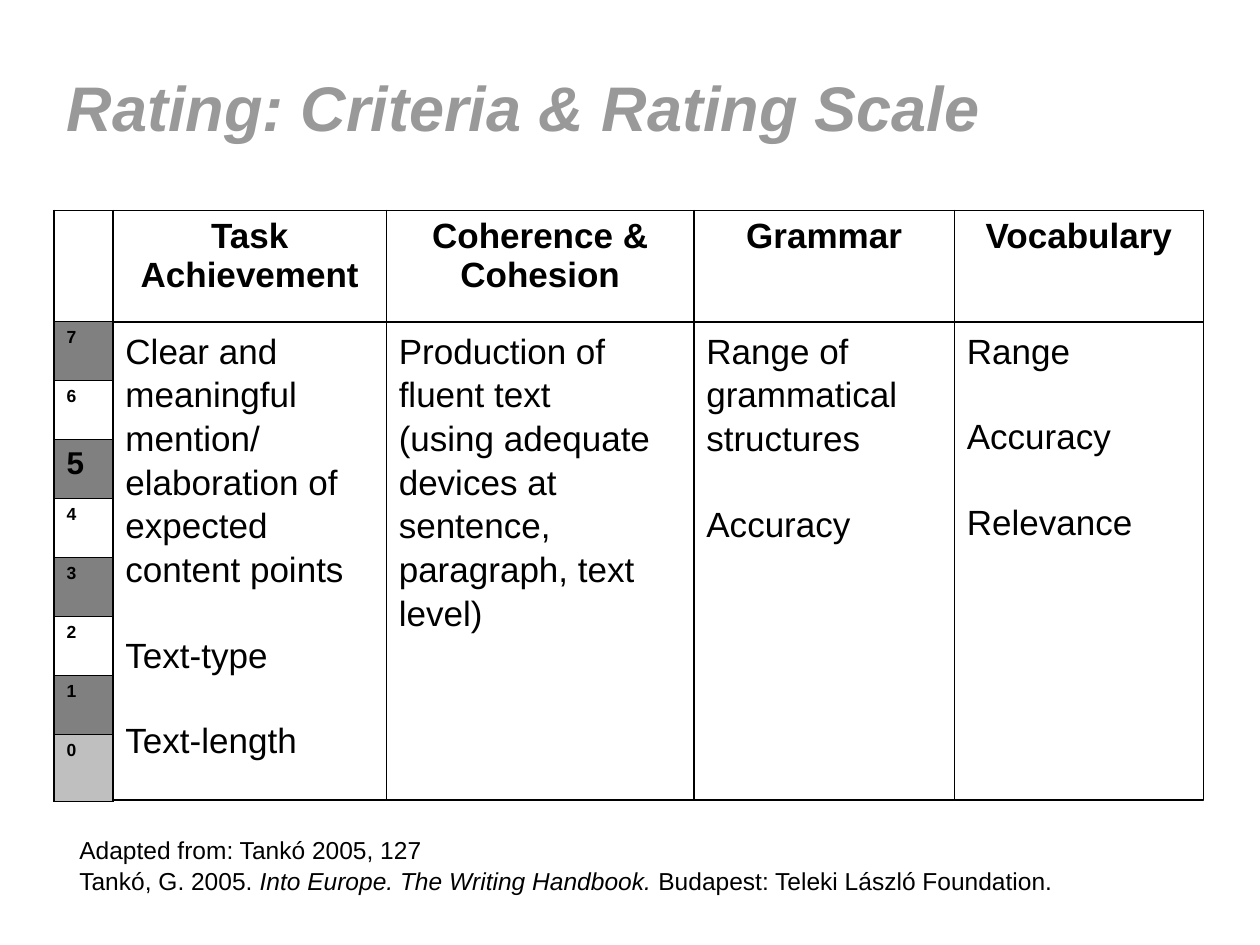
from lxml import etree
from pptx import Presentation, util as u
from pptx.dml.color import RGBColor
from pptx.enum import shapes, text
from pptx.oxml import ns

COLORS = {"title": "999999", "ink": "000000", "dark": "808080", "light": "BFBFBF"}
LEFT, BODY_TOP, BODY_HEIGHT = 1.09, 6.48, 9.65
SCALE_WIDTH = 1.19
CRITERIA = [
    ("Task Achievement", 5.51, [
        ("Clear and meaningful mention/", 0),
        ("elaboration of expected content points", 0),
        ("Text-type", 24),
        ("Text-length", 24)]),
    ("Coherence & Cohesion", 6.2, [
        ("Production of fluent text", 0),
        ("(using adequate devices at sentence, paragraph, text level)", 0)]),
    ("Grammar", 5.25, [
        ("Range of grammatical structures", 0),
        ("Accuracy", 24)]),
    ("Vocabulary", 5.02, [
        ("Range", 0),
        ("Accuracy", 24),
        ("Relevance", 24)]),
]


def set_font(para, size, bold=False, italic=False, color="ink"):
    font = para.font
    font.name, font.size = "Arial", u.Pt(size)
    font.bold, font.italic = bold, italic
    font.color.rgb = RGBColor.from_string(COLORS[color])


def add_grid(page, top, widths, heights):
    frame = page.shapes.add_table(len(heights), len(widths), u.Cm(LEFT), u.Cm(top),
                                  u.Cm(sum(widths)), u.Cm(sum(heights)))
    grid = frame.table
    grid.first_row = grid.horz_banding = False
    for column, width in zip(grid.columns, widths):
        column.width = u.Cm(width)
    for row, height in zip(grid.rows, heights):
        row.height = u.Cm(height)
    for cell in grid.iter_cells():
        properties = cell._tc.get_or_add_tcPr()
        for side in ("a:lnL", "a:lnR", "a:lnT", "a:lnB"):
            border = etree.SubElement(properties, ns.qn(side), w=str(u.Pt(1)))
            solid = etree.SubElement(border, ns.qn("a:solidFill"))
            etree.SubElement(solid, ns.qn("a:srgbClr"), val=COLORS["ink"])
        cell.fill.background()
    return grid


deck = Presentation()
deck.slide_width, deck.slide_height = u.Cm(25.4), u.Cm(19.05)
page = deck.slides.add_slide(deck.slide_layouts[5])

title = page.shapes.title
title.left, title.top, title.width, title.height = u.Cm(LEFT), u.Cm(0.74), u.Cm(23.6), u.Cm(2.79)
title.text_frame.text = "Rating: Criteria & Rating Scale"
title.text_frame.vertical_anchor = text.MSO_ANCHOR.MIDDLE
para = title.text_frame.paragraphs[0]
para.alignment = text.PP_ALIGN.LEFT
set_font(para, 36, bold=True, italic=True, color="title")

widths = [SCALE_WIDTH] + [width for _, width, _ in CRITERIA]
header = add_grid(page, 4.24, widths, [2.26])
for column, (name, _, _) in enumerate(CRITERIA, start=1):
    cell = header.cell(0, column)
    cell.text = name
    para = cell.text_frame.paragraphs[0]
    para.alignment = text.PP_ALIGN.CENTER
    set_font(para, 20, bold=True)

scale = add_grid(page, BODY_TOP, [SCALE_WIDTH], [1.19] * 7 + [1.35])
for row, score in enumerate(range(7, -1, -1)):
    cell = scale.cell(row, 0)
    cell.text = str(score)
    set_font(cell.text_frame.paragraphs[0], 18 if score == 5 else 10, bold=True)
    if score % 2 or score == 0:
        cell.fill.solid()
        cell.fill.fore_color.rgb = RGBColor.from_string(COLORS["dark" if score else "light"])

left = LEFT + SCALE_WIDTH
for _, width, descriptors in CRITERIA:
    box = page.shapes.add_shape(shapes.MSO_SHAPE.RECTANGLE, u.Cm(left), u.Cm(BODY_TOP),
                                u.Cm(width), u.Cm(BODY_HEIGHT))
    box.shadow.inherit = False
    box.fill.background()
    box.line.color.rgb = RGBColor.from_string(COLORS["ink"])
    box.line.width = u.Pt(0.75)
    frame = box.text_frame
    frame.word_wrap = True
    frame.vertical_anchor = text.MSO_ANCHOR.TOP
    frame.text = "\n".join(words for words, _ in descriptors)
    for para, (_, gap) in zip(frame.paragraphs, descriptors):
        para.alignment = text.PP_ALIGN.LEFT
        para.line_spacing = 1.04
        if gap:
            para.space_before = u.Pt(gap)
        set_font(para, 20)
    left += width

source = page.shapes.add_textbox(u.Cm(1.35), u.Cm(16.69), u.Cm(20.98), u.Cm(2.06))
frame = source.text_frame
frame.word_wrap = True
frame.text = "Adapted from: Tankó 2005, 127"
reference = frame.add_paragraph()
for words, italic in [("Tankó, G. 2005. ", None),
                      ("Into Europe. The Writing Handbook. ", True),
                      ("Budapest: Teleki László Foundation.", None)]:
    span = reference.add_run()
    span.text = words
    span.font.italic = italic
for para in frame.paragraphs:
    para.line_spacing = 1.04
    set_font(para, 14)

deck.save("out.pptx")
